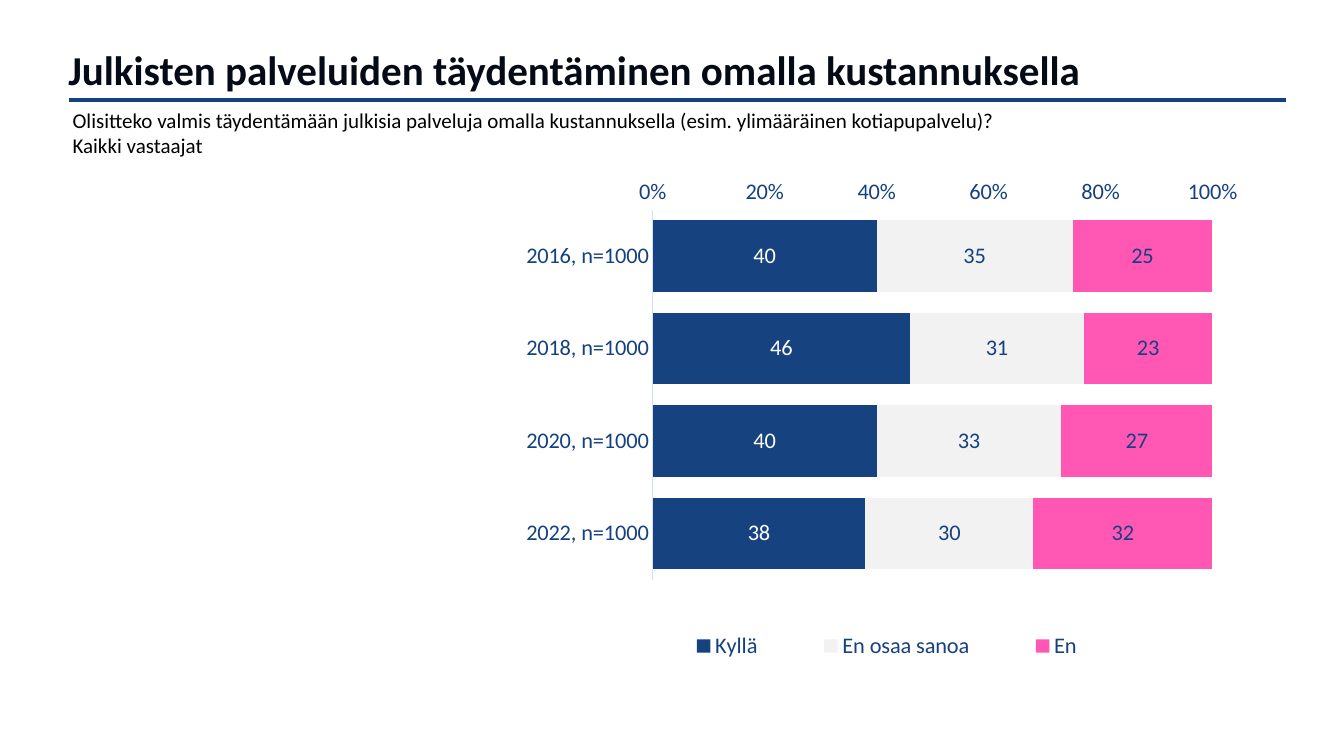
"""Build a slide on supplementing public services at one's own expense."""
from lxml.etree import SubElement
from pptx import Presentation
from pptx.chart.data import CategoryChartData
from pptx.dml.color import RGBColor
from pptx.enum.chart import XL_AXIS_CROSSES, XL_CHART_TYPE, XL_LEGEND_POSITION, XL_TICK_MARK
from pptx.enum.shapes import MSO_CONNECTOR
from pptx.enum.text import MSO_ANCHOR, PP_ALIGN
from pptx.oxml import parse_xml
from pptx.oxml.ns import nsdecls, qn
from pptx.util import Cm, Pt

COLORS = {
    "navy": "164180",
    "bar": "164280",
    "grey": "F2F2F2",
    "pink": "FF57B3",
    "axis": "D1E0F7",
    "title": "040B16",
    "black": "000000",
    "white": "FFFFFF",
}
SERIES = [
    ("Kyllä", (40, 46, 40, 38), "bar", "white"),
    ("En osaa sanoa", (35, 31, 33, 30), "grey", "navy"),
    ("En", (25, 23, 27, 32), "pink", "navy"),
]
QUESTION = [
    "Olisitteko valmis täydentämään julkisia palveluja omalla kustannuksella "
    "(esim. ylimääräinen kotiapupalvelu)?",
    "Kaikki vastaajat",
]


def set_font(font, size, color, bold=False):
    font.name = "Calibri"
    font.size = Pt(size)
    font.bold = bold
    font.color.rgb = RGBColor.from_string(COLORS[color])


def make_layout(x, y, w, h, target=""):
    return parse_xml(
        f'<c:layout {nsdecls("c")}><c:manualLayout>{target}'
        '<c:xMode val="edge"/><c:yMode val="edge"/>'
        f'<c:x val="{x}"/><c:y val="{y}"/><c:w val="{w}"/><c:h val="{h}"/>'
        '</c:manualLayout></c:layout>'
    )


prs = Presentation()
prs.slide_width, prs.slide_height = Cm(33.87), Cm(19.05)
s = prs.slides.add_slide(prs.slide_layouts[5])

title = s.shapes.title
title.left, title.top, title.width, title.height = Cm(1.47), Cm(0.99), Cm(31.47), Cm(1.5)
tf = title.text_frame
tf.text = "Julkisten palveluiden täydentäminen omalla kustannuksella"
tf.vertical_anchor = MSO_ANCHOR.MIDDLE
p = tf.paragraphs[0]
p.alignment = PP_ALIGN.LEFT
set_font(p.font, 29.3, "title", True)

rule = s.shapes.add_connector(MSO_CONNECTOR.STRAIGHT, Cm(1.73), Cm(2.52), Cm(32.41), Cm(2.52))
rule.line.color.rgb = RGBColor.from_string(COLORS["navy"])
rule.line.width = Pt(2.25)
SubElement(rule.element.spPr, qn("a:effectLst"))

question = s.shapes.add_textbox(Cm(1.58), Cm(2.59), Cm(30.81), Cm(1.55))
tf = question.text_frame
tf.word_wrap = True
tf.text = "\n".join(QUESTION)
for p in tf.paragraphs:
    set_font(p.font, 15, "black")

data = CategoryChartData()
data.categories = [f"{year}, n=1000" for year in range(2016, 2023, 2)]
for name, values, fill, label in SERIES:
    data.add_series(name, values)
chart = s.shapes.add_chart(
    XL_CHART_TYPE.BAR_STACKED_100, Cm(2.34), Cm(4.5), Cm(29.21), Cm(12.4), data
).chart
chart.has_title = False
set_font(chart.font, 16, "navy")

plot = chart.plots[0]
plot.gap_width = 30
plot.overlap = 100
plot.vary_by_categories = False
for series, (name, values, fill, label) in zip(plot.series, SERIES):
    series.format.fill.solid()
    series.format.fill.fore_color.rgb = RGBColor.from_string(COLORS[fill])
    series.data_labels.show_value = True
    set_font(series.data_labels.font, 16, label)

years = chart.category_axis
years.reverse_order = True
years.crosses = XL_AXIS_CROSSES.MAXIMUM
years.format.line.color.rgb = RGBColor.from_string(COLORS["axis"])
years.format.line.width = Pt(0.75)
share = chart.value_axis
share.minimum_scale, share.maximum_scale, share.major_unit = 0, 1, 0.2
share.has_major_gridlines = False
share.format.line.fill.background()
share.tick_labels.number_format = "0%"
share.tick_labels.number_format_is_linked = False
for axis in (years, share):
    axis.major_tick_mark = axis.minor_tick_mark = XL_TICK_MARK.NONE

chart.has_legend = True
legend = chart.legend
legend.position = XL_LEGEND_POSITION.BOTTOM
legend.include_in_layout = False

area = chart.element.find(".//" + qn("c:plotArea"))
key = chart.element.find(".//" + qn("c:legend"))
for parent in (area, key):
    for old in parent.findall(qn("c:layout")):
        parent.remove(old)
area.insert(0, make_layout(0.483, 0.061, 0.483, 0.754, '<c:layoutTarget val="inner"/>'))
key.find(qn("c:legendPos")).addnext(make_layout(0.47, 0.91, 0.43, 0.08))

prs.save("out.pptx")
